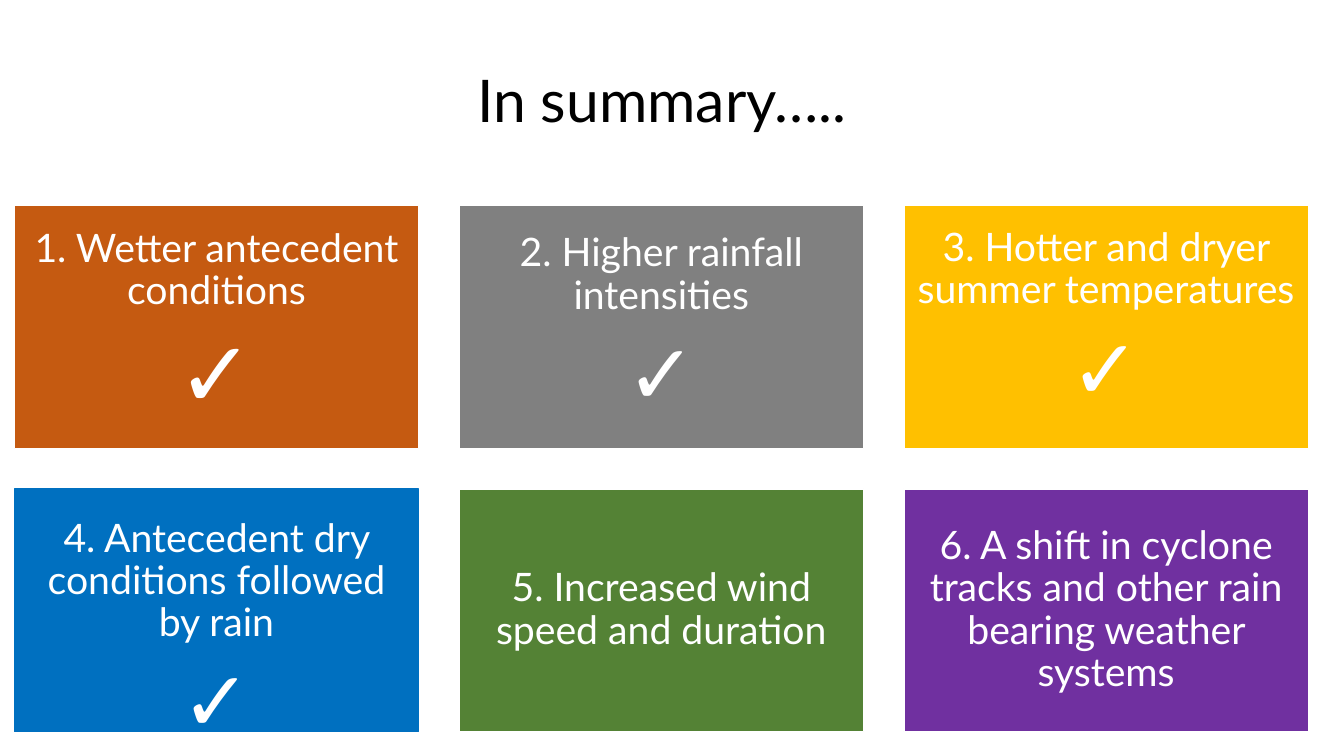
from dataclasses import dataclass

from pptx import Presentation
from pptx.dml.color import RGBColor
from pptx.enum.shapes import MSO_SHAPE
from pptx.enum.text import MSO_ANCHOR, PP_ALIGN
from pptx.util import Cm, Pt

RECTANGLE = MSO_SHAPE.RECTANGLE
TOP, MIDDLE = MSO_ANCHOR.TOP, MSO_ANCHOR.MIDDLE
CENTER = PP_ALIGN.CENTER
TITLE_ONLY = 5


@dataclass(frozen=True)
class Theme:
    font: str = "Lato"
    title_color: str = "000000"
    light: str = "FFFFFF"
    orange: str = "C55A11"
    grey: str = "808080"
    yellow: str = "FFC000"
    blue: str = "0070C0"
    green: str = "548235"
    purple: str = "7030A0"
    title_size: int = 42
    card_size: int = 28
    tick_size: int = 60
    big_tick_size: int = 66


class SummarySlide:
    def __init__(self, deck, theme):
        self.theme = theme
        self.slide = deck.slides.add_slide(deck.slide_layouts[TITLE_ONLY])

    def fill_paragraph(self, paragraph, wording, size, color, space_after):
        layout = {"alignment": CENTER, "line_spacing": 0.9,
                  "space_before": Pt(0), "space_after": Pt(space_after)}
        for name, value in layout.items():
            setattr(paragraph, name, value)
        run = paragraph.add_run()
        run.text = wording
        for name, value in {"name": self.theme.font, "size": Pt(size)}.items():
            setattr(run.font, name, value)
        run.font.color.rgb = RGBColor.from_string(color)

    def title(self, wording, left, top, width, height):
        heading = self.slide.shapes.title
        place = {"left": left, "top": top, "width": width, "height": height}
        for name, value in place.items():
            setattr(heading, name, Cm(value))
        frame = heading.text_frame
        frame.vertical_anchor = MIDDLE
        self.fill_paragraph(frame.paragraphs[0], wording,
                            self.theme.title_size, self.theme.title_color, 6)

    def card(self, wording, fill, border, box, tick_size=None, top_inset=None):
        """Draw a filled card; a tick needs the text to start at top_inset."""
        card = self.slide.shapes.add_shape(RECTANGLE, *map(Cm, box))
        card.shadow.inherit = False
        card.fill.solid()
        card.fill.fore_color.rgb = RGBColor.from_string(fill)
        card.line.color.rgb = RGBColor.from_string(border)
        card.line.width = Pt(1)
        frame = card.text_frame
        inset = Cm(0.28)
        settings = {"word_wrap": True, "margin_left": inset,
                    "margin_right": inset, "margin_bottom": inset,
                    "margin_top": Cm(top_inset) if tick_size else inset,
                    "vertical_anchor": TOP if tick_size else MIDDLE}
        for name, value in settings.items():
            setattr(frame, name, value)
        self.fill_paragraph(frame.paragraphs[0], wording, self.theme.card_size,
                            self.theme.light, 10 if tick_size else 0)
        if tick_size:
            self.fill_paragraph(frame.add_paragraph(), "✓", tick_size,
                                self.theme.light, 0)


def main():
    deck = Presentation()
    deck.slide_width, deck.slide_height = Cm(33.87), Cm(19.05)
    theme = Theme()
    summary = SummarySlide(deck, theme)
    summary.title("In summary…..", 1.35, 0.76, 30.66, 3.68)

    # wording, fill, border, tick size, top inset in cm
    findings = [
        ("1. Wetter antecedent conditions", theme.orange, theme.light,
         theme.big_tick_size, 0.58),
        ("2. Higher rainfall intensities", theme.grey, theme.light,
         theme.tick_size, 0.69),
        ("3. Hotter and dryer summer temperatures", theme.yellow, theme.light,
         theme.tick_size, 0.56),
        ("4. Antecedent dry conditions followed by rain", theme.blue,
         theme.blue, theme.tick_size, 0.74),
        ("5. Increased wind speed and duration", theme.green, theme.light,
         None, None),
        ("6. A shift in cyclone tracks and other rain bearing weather systems",
         theme.purple, theme.light, None, None),
    ]
    columns, width, height, gap = 3, 10.19, 6.12, 1.02
    for index, (wording, fill, border, tick, inset) in enumerate(findings):
        row, column = divmod(index, columns)
        box = (0.36 + column * (width + gap), 5.18 + row * (height + gap),
               width, height)
        summary.card(wording, fill, border, box, tick, inset)

    deck.save("out.pptx")


if __name__ == "__main__":
    main()
